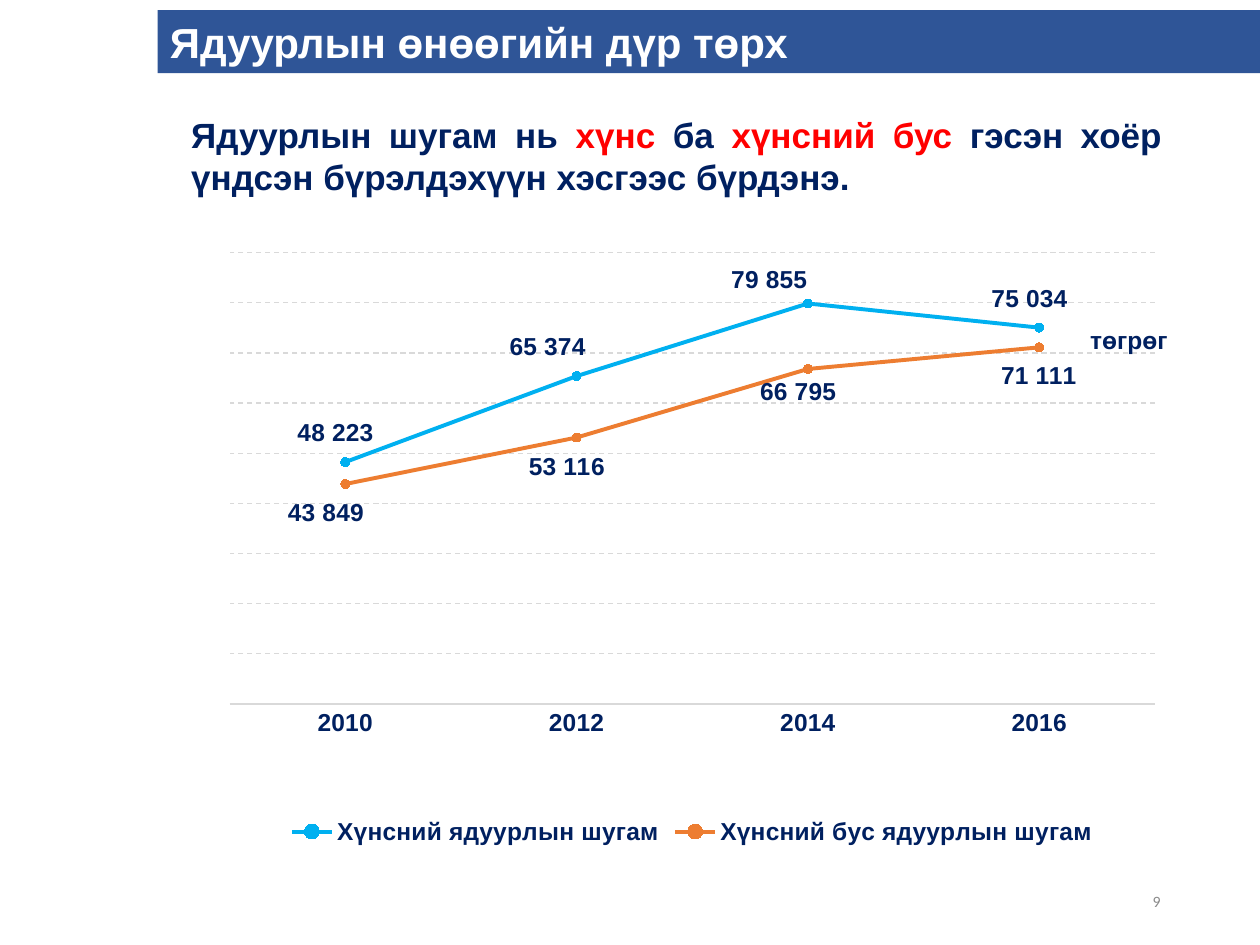
from lxml import etree
from pptx import Presentation
from pptx import util as u
from pptx.chart.data import CategoryChartData
from pptx.dml.color import RGBColor
from pptx.enum import chart as charts, dml, shapes, text
from pptx.oxml.ns import qn

NAVY, RED, WHITE, GRAY = "002060", "FF0000", "FFFFFF", "D9D9D9"
ABOVE, BELOW = charts.XL_LABEL_POSITION.ABOVE, charts.XL_LABEL_POSITION.BELOW
SERIES = [
    ("Хүнсний ядуурлын шугам", "00B0F0", [48223, 65374, 79855, 75034], ABOVE,
     [(-0.01, -0.01), (-0.03, -0.01), (-0.04, 0), (-0.01, -0.01)]),
    ("Хүнсний бус ядуурлын шугам", "ED7D31", [43849, 53116, 66795, 71111], BELOW,
     [(-0.02, 0.01), (-0.01, 0.01), (-0.01, 0), (0, 0.01)]),
]


def color(value):
    return RGBColor.from_string(value)


def style_font(font, size, value=NAVY, bold=True, name="Arial"):
    font.size = u.Pt(size)
    font.name = name
    font.bold = bold
    font.color.rgb = color(value)


def points(box):
    return [u.Pt(length) for length in box]


def write(shape, runs, size, align, bold=True, name="Arial"):
    frame = shape.text_frame
    frame.word_wrap = True
    frame.vertical_anchor = text.MSO_ANCHOR.MIDDLE
    paragraph = frame.paragraphs[0]
    paragraph.alignment = align
    for words, value in runs:
        run = paragraph.add_run()
        run.text = words
        style_font(run.font, size, value, bold, name)


def add_label(slide, box, runs, size, align, **style):
    write(slide.shapes.add_textbox(*points(box)), runs, size, align, **style)


def add_banner(slide, box, words):
    banner = slide.shapes.add_shape(shapes.MSO_SHAPE.RECTANGLE, *points(box))
    banner.shadow.inherit = False
    banner.fill.solid()
    banner.fill.fore_color.rgb = color("2F5597")
    banner.line.fill.background()
    write(banner, [(words, WHITE)], 24, text.PP_ALIGN.LEFT)


def manual_layout(**settings):
    layout = etree.Element(qn("c:layout"))
    manual = etree.SubElement(layout, qn("c:manualLayout"))
    for key, value in settings.items():
        etree.SubElement(manual, qn(f"c:{key}")).set("val", str(value))
    return layout


def style_line(line, value, width):
    line.color.rgb = color(value)
    line.width = u.Pt(width)


def style_series(series, value, position, offsets):
    series.smooth = False
    style_line(series.format.line, value, 2.25)
    marker = series.marker
    marker.style = charts.XL_MARKER_STYLE.CIRCLE
    marker.size = 5
    marker.format.fill.solid()
    marker.format.fill.fore_color.rgb = color(value)
    marker.format.line.color.rgb = color(value)
    for index, (x, y) in enumerate(offsets):
        label = series.points[index].data_label
        style_font(label.font, 14)
        label.position = position
    for element, (x, y) in zip(series.data_labels._element.findall(qn("c:dLbl")), offsets):
        element.find(qn("c:idx")).addnext(manual_layout(x=x, y=y))
    labels = series.data_labels
    labels.show_value = True
    labels.position = position
    style_font(labels.font, 14)


def add_poverty_chart(slide, box):
    data = CategoryChartData(number_format="##\\ ###")
    data.categories = ["2010", "2012", "2014", "2016"]
    for name, _, values, _, _ in SERIES:
        data.add_series(name, values)
    chart = slide.shapes.add_chart(
        charts.XL_CHART_TYPE.LINE_MARKERS, *points(box), data).chart
    chart.has_title = False
    style_font(chart.font, 14)
    chart.plots[0].vary_by_categories = False
    chart.has_legend = True
    chart.legend.position = charts.XL_LEGEND_POSITION.BOTTOM
    chart.legend.include_in_layout = False
    style_font(chart.legend.font, 14)

    years = chart.category_axis
    years.major_tick_mark = charts.XL_TICK_MARK.NONE
    style_line(years.format.line, GRAY, 0.75)
    style_font(years.tick_labels.font, 14)
    amounts = chart.value_axis
    amounts.minimum_scale, amounts.maximum_scale = 0, 90000
    amounts.major_unit = 10000
    amounts.visible = False
    amounts.has_major_gridlines = True
    grid = amounts.major_gridlines.format.line
    style_line(grid, GRAY, 0.75)
    grid.dash_style = dml.MSO_LINE.DASH

    area = chart.plots[0]._element.getparent()
    for layout in area.findall(qn("c:layout")):
        area.remove(layout)
    area.insert(0, manual_layout(layoutTarget="inner", xMode="edge", yMode="edge",
                                 x=0.02, y=0, w=0.96, h=0.755))
    for series, (_, value, _, position, offsets) in zip(chart.plots[0].series, SERIES):
        style_series(series, value, position, offsets)


def main():
    presentation = Presentation()
    presentation.slide_width, presentation.slide_height = u.Pt(720), u.Pt(540)
    slide = presentation.slides.add_slide(presentation.slide_layouts[6])
    align = text.PP_ALIGN
    add_label(slide, (508.3, 500.4, 162, 28.8), [("9", "898989")], 9, align.RIGHT,
              bold=False, name="Calibri")
    add_banner(slide, (90, 5.8, 630, 36), "Ядуурлын өнөөгийн дүр төрх")
    add_label(slide, (102.2, 60.5, 568.8, 56.2), [
        ("Ядуурлын шугам нь ", NAVY),
        ("хүнс", RED),
        (" ба ", NAVY),
        ("хүнсний бус", RED),
        (" гэсэн хоёр үндсэн бүрэлдэхүүн хэсгээс бүрдэнэ. ", NAVY),
    ], 20, align.JUSTIFY)
    add_poverty_chart(slide, (120.2, 144, 550.8, 342))
    add_label(slide, (606.2, 180, 77.8, 28), [("төгрөг", NAVY)], 14, align.CENTER)
    presentation.save("out.pptx")


if __name__ == "__main__":
    main()
